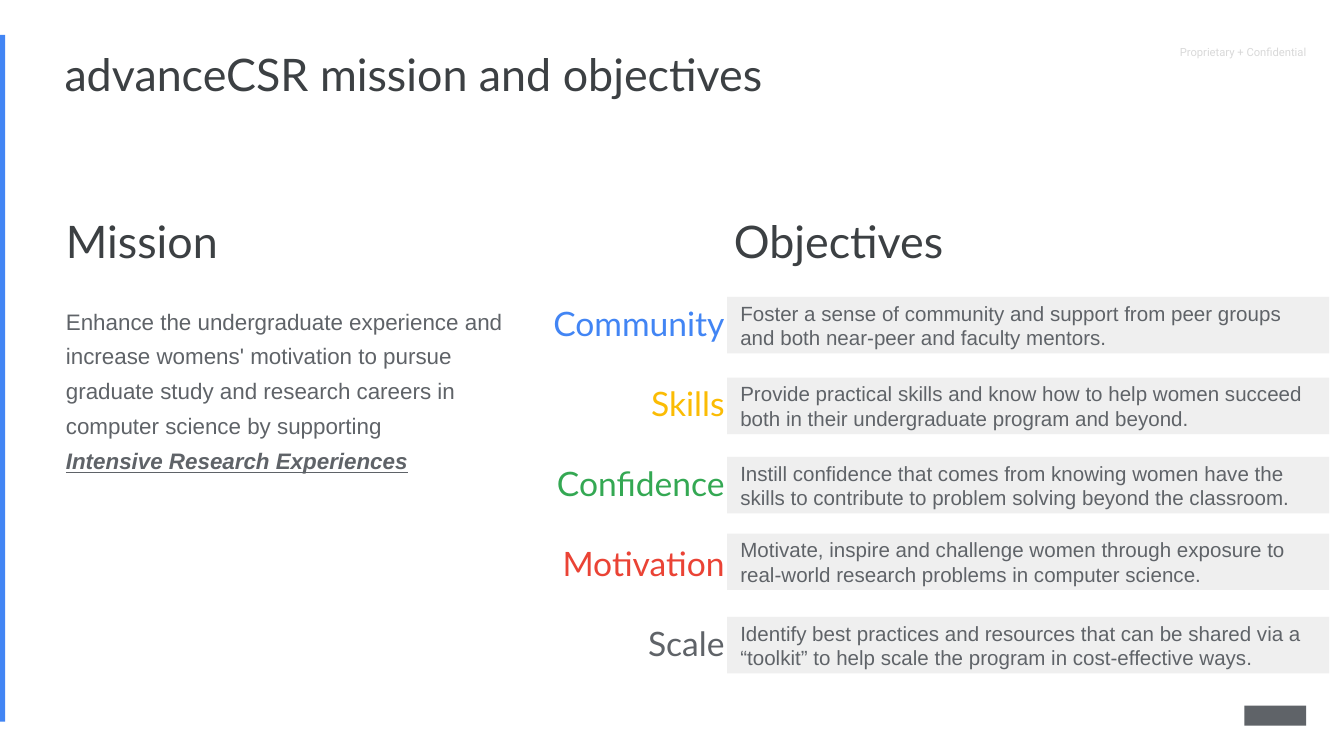
from pptx import Presentation
from pptx.dml.color import RGBColor
from pptx.enum.shapes import MSO_SHAPE
from pptx.enum.text import MSO_ANCHOR, MSO_AUTO_SIZE, PP_ALIGN
from pptx.util import Inches, Pt

RECTANGLE = MSO_SHAPE.RECTANGLE
TOP, MIDDLE = MSO_ANCHOR.TOP, MSO_ANCHOR.MIDDLE
LEFT, RIGHT = PP_ALIGN.LEFT, PP_ALIGN.RIGHT
FIXED_SIZE = MSO_AUTO_SIZE.NONE

BLUE = RGBColor(0x42, 0x85, 0xF4)
YELLOW = RGBColor(0xFB, 0xBC, 0x04)
GREEN = RGBColor(0x34, 0xA8, 0x53)
RED = RGBColor(0xEA, 0x43, 0x35)
DARK = RGBColor(0x3C, 0x40, 0x43)
GRAY = RGBColor(0x5F, 0x63, 0x68)
LIGHT = RGBColor(0xD9, 0xD9, 0xD9)
PANEL = RGBColor(0xEF, 0xEF, 0xEF)


def write(shape, text, size, font, color, align=LEFT, anchor=TOP,
          spacing=1.0, margins=(0.1, 0.05)):
    """Fill a shape with text in one style; margins are (sides, top and bottom)."""
    frame = shape.text_frame
    frame.text = text
    frame.word_wrap = True
    frame.auto_size = FIXED_SIZE
    frame.vertical_anchor = anchor
    frame.margin_left = frame.margin_right = Inches(margins[0])
    frame.margin_top = frame.margin_bottom = Inches(margins[1])
    for paragraph in frame.paragraphs:
        paragraph.alignment = align
        paragraph.line_spacing = spacing
        for run in paragraph.runs:
            run.font.size = Pt(size)
            run.font.name = font
            run.font.color.rgb = color


def add_panel(left, top, width, height, color):
    panel = slide.shapes.add_shape(
        RECTANGLE, Inches(left), Inches(top), Inches(width), Inches(height))
    panel.shadow.inherit = False
    panel.fill.solid()
    panel.fill.fore_color.rgb = color
    panel.line.fill.background()
    return panel


prs = Presentation()
prs.slide_width = Inches(10)
prs.slide_height = Inches(10 * 9 / 16)
slide = prs.slides.add_slide(prs.slide_layouts[5])

# Page frame
confidentiality = slide.shapes.add_textbox(
    Inches(8.68), Inches(0.24), Inches(1.32), Inches(0.33))
write(confidentiality, "Proprietary + Confidential", 6, "Roboto", LIGHT,
      margins=(0.1, 0.1))
add_panel(-0.02, 0.26, 0.06, 5.11, BLUE)
add_panel(9.26, 5.25, 0.46, 0.15, GRAY)

title = slide.shapes.title
title.left, title.top = Inches(0.38), Inches(0.29)
title.width, title.height = Inches(8.88), Inches(0.59)
write(title, "advanceCSR mission and objectives", 24, "Lato", DARK,
      spacing=0.9, margins=(0.1, 0.1))

# Column headings
for heading, left in (("Mission", 0.47), ("Objectives", 5.44)):
    heading_box = slide.shapes.add_textbox(
        Inches(left), Inches(1.57), Inches(2.61), Inches(0.42))
    write(heading_box, heading, 24, "Lato", DARK, margins=(0.02, 0.02))

# Mission
mission = slide.shapes.add_textbox(
    Inches(0.47), Inches(2.21), Inches(3.49), Inches(1.36))
write(mission,
      "Enhance the undergraduate experience and increase womens' motivation to "
      "pursue graduate study and research careers in computer science by supporting\n"
      "Intensive Research Experiences",
      12, "Arial", GRAY, spacing=1.3, margins=(0.02, 0.02))
emphasis = mission.text_frame.paragraphs[1].runs[0].font
emphasis.bold = emphasis.italic = emphasis.underline = True

# Objectives: label, colour, top of the description, description
OBJECTIVES = [
    ("Community", BLUE, 2.21,
     "Foster a sense of community and support from peer groups and both "
     "near-peer and faculty mentors."),
    ("Skills", YELLOW, 2.81,
     "Provide practical skills and know how to help women succeed both in "
     "their undergraduate program and beyond."),
    ("Confidence", GREEN, 3.4,
     "Instill confidence that comes from knowing women have the skills to "
     "contribute to problem solving beyond the classroom."),
    ("Motivation", RED, 3.97,
     "Motivate, inspire and challenge women through exposure to real-world "
     "research problems in computer science."),
    ("Scale", GRAY, 4.59,
     "Identify best practices and resources that can be shared via a "
     "“toolkit” to help scale the program in cost-effective ways."),
]
FIRST_ROW, LAST_ROW, ROW_HEIGHT = 2.21, 4.59, 0.42
row_step = (LAST_ROW - FIRST_ROW) / (len(OBJECTIVES) - 1)

for row, (objective, color, top, description) in enumerate(OBJECTIVES):
    label = slide.shapes.add_textbox(
        Inches(3.84), Inches(FIRST_ROW + row * row_step),
        Inches(1.65), Inches(ROW_HEIGHT))
    write(label, objective, 18, "Lato", color, RIGHT, MIDDLE, spacing=0.9)
    description_panel = add_panel(5.41, top, 4.48, ROW_HEIGHT, PANEL)
    write(description_panel, description, 11, "Arial", GRAY, anchor=MIDDLE)

prs.save("out.pptx")
